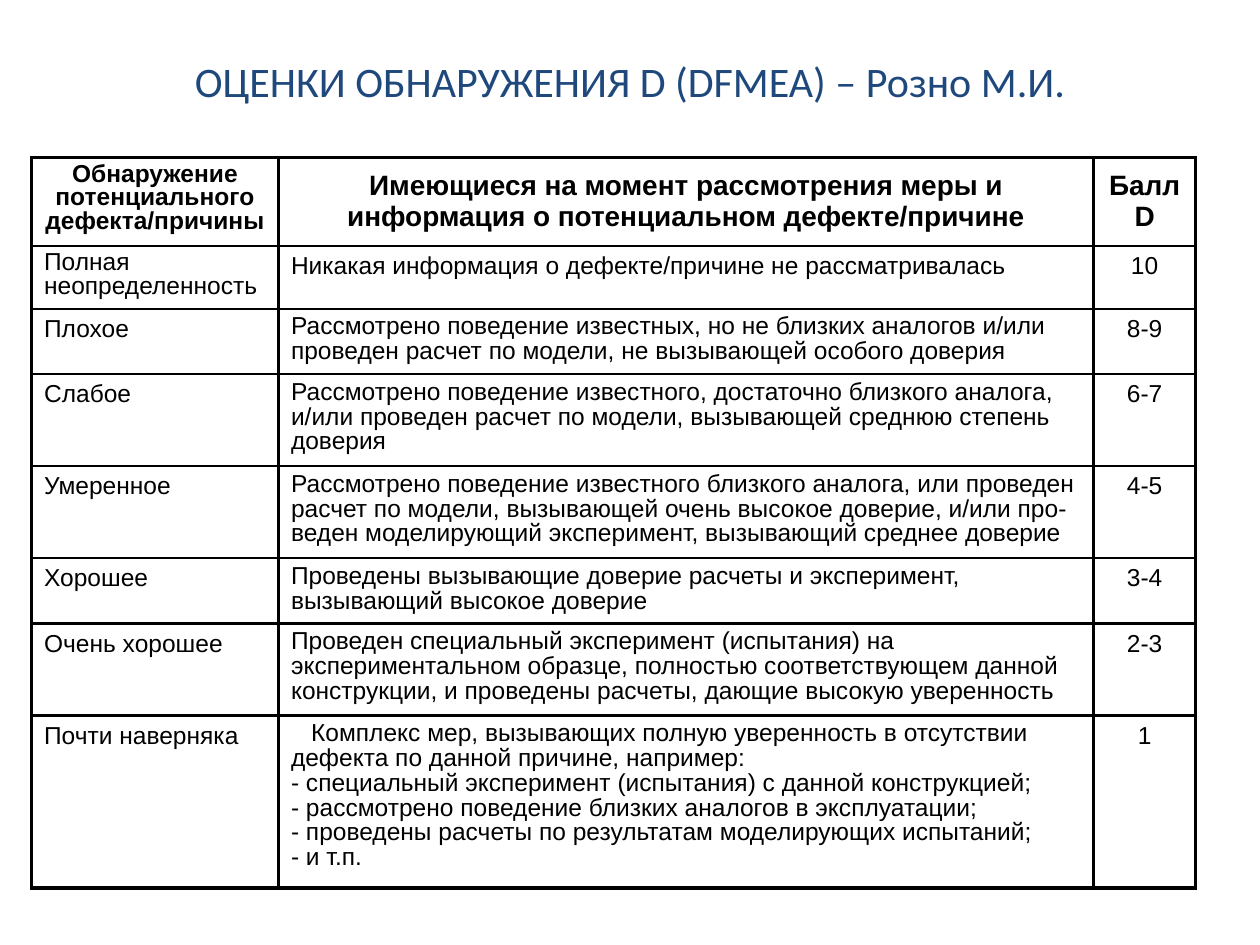
import pptx
import pptx.util
import pptx.dml.color
import pptx.enum.text
import pptx.oxml
import pptx.oxml.ns

Pt = pptx.util.Pt
Inch = pptx.util.Inches
Align = pptx.enum.text.PP_ALIGN
Anchor = pptx.enum.text.MSO_ANCHOR
WIDE, HIGH = 10, 7.5
INK, BLUE = "000000", "1F497D"
COLS = [1.96, 6.47, 0.81]
ROWS = [0.7, 0.5, 0.52, 0.73, 0.73, 0.52, 0.73, 1.37]
HEAD = [
    ("Обнаружение потенциального\nдефекта/причины", 14, 0.85, Anchor.TOP),
    ("Имеющиеся на момент рассмотрения меры и информация о потенциальном дефекте/причине", 16, None, Anchor.MIDDLE),
    ("Балл D", 16, None, Anchor.MIDDLE),
]
BODY = [
    ("Полная неопределенность", ["Никакая информация о дефекте/причине не рассматривалась"], "10"),
    ("Плохое", ["Рассмотрено поведение известных, но не близких аналогов и/или проведен расчет по модели, не вызывающей особого доверия"], "8-9"),
    ("Слабое", ["Рассмотрено поведение известного, достаточно близкого аналога, и/или проведен расчет по модели, вызывающей среднюю степень доверия"], "6-7"),
    ("Умеренное", ["Рассмотрено поведение известного близкого аналога, или проведен расчет по модели, вызывающей очень высокое доверие, и/или про-веден моделирующий эксперимент, вызывающий среднее доверие"], "4-5"),
    ("Хорошее", ["Проведены вызывающие доверие расчеты и эксперимент, вызывающий высокое доверие"], "3-4"),
    ("Очень хорошее", ["Проведен специальный эксперимент (испытания) на экспериментальном образце, полностью соответствующем данной конструкции, и проведены расчеты, дающие высокую уверенность"], "2-3"),
    ("Почти наверняка", [
        "Комплекс мер, вызывающих полную уверенность в отсутствии дефекта по данной причине, например:\n- специальный эксперимент (испытания) с данной конструкцией;",
        "- рассмотрено поведение близких аналогов в эксплуатации;\n- проведены расчеты по результатам моделирующих испытаний;\n- и т.п.",
    ], "1"),
]


def tint(code):
    return pptx.dml.color.RGBColor.from_string(code)


def write(para, text, size=14, font="Arial", color=INK, bold=False,
          align=Align.LEFT, space=None, indent=0):
    para.text = text
    para.alignment = align
    para.line_spacing = space
    if indent:
        para._p.get_or_add_pPr().set("indent", str(Inch(indent)))
    for run in para.runs:
        run.font.size = Pt(size)
        run.font.name = font
        run.font.bold = bold
        run.font.color.rgb = tint(color)


def edge(cell, sides):
    props = cell._tc.get_or_add_tcPr()
    for spot, (side, thick) in enumerate(sides.items()):
        line = pptx.oxml.parse_xml(
            f'<a:ln{side} {pptx.oxml.ns.nsdecls("a")} w="{Pt(thick)}">'
            f'<a:solidFill><a:srgbClr val="{INK}"/></a:solidFill></a:ln{side}>')
        props.insert(spot, line)


def title(slide, box):
    head = slide.shapes.title
    head.left, head.top, head.width, head.height = map(Inch, box)
    frame = head.text_frame
    frame.word_wrap = True
    frame.vertical_anchor = Anchor.MIDDLE
    write(frame.paragraphs[0], "ОЦЕНКИ ОБНАРУЖЕНИЯ D (DFMEA) – Розно М.И.",
          size=24, font="Calibri", color=BLUE, align=Align.CENTER)


def fill(table):
    for col, (text, size, space, anchor) in enumerate(HEAD):
        cell = table.cell(0, col)
        cell.vertical_anchor = anchor
        write(cell.text_frame.paragraphs[0], text, size=size, bold=True,
              align=Align.CENTER, space=space)
    for row, (name, parts, score) in enumerate(BODY, 1):
        first, mid, last = table.rows[row].cells
        tight = 0.85 if row == 1 else None
        write(first.text_frame.paragraphs[0], name, space=tight)
        frame = mid.text_frame
        for spot, text in enumerate(parts):
            para = frame.add_paragraph() if spot else frame.paragraphs[0]
            inset = 0.16 if len(parts) > 1 and spot == 0 else 0
            write(para, text, space=0.9 if row > 1 else None, indent=inset)
        write(last.text_frame.paragraphs[0], score, align=Align.CENTER)


def grid(slide, box):
    left, top, width, height = box
    table = slide.shapes.add_table(len(ROWS), len(COLS), *map(Inch, box)).table
    table.first_row = table.horz_banding = False
    for col, part in zip(table.columns, COLS):
        col.width = Inch(width * part / sum(COLS))
    for row, part in zip(table.rows, ROWS):
        row.height = Inch(height * part / sum(ROWS))
    fill(table)
    for y, row in enumerate(table.rows):
        for x, cell in enumerate(row.cells):
            cell.fill.background()
            outer = {"L": x == 0, "R": x == len(COLS) - 1,
                     "T": y == 0, "B": y == len(ROWS) - 1}
            edge(cell, {side: 2.25 if rim else 1.5 for side, rim in outer.items()})


def main():
    deck = pptx.Presentation()
    deck.slide_width, deck.slide_height = Inch(WIDE), Inch(HIGH)
    slide = deck.slides.add_slide(deck.slide_layouts[5])
    title(slide, (WIDE * 0.05, HIGH * 0.05, WIDE * 0.9, HIGH * 0.07))
    grid(slide, (WIDE * 0.025, HIGH / 6, sum(COLS), sum(ROWS)))
    deck.save("out.pptx")


if __name__ == "__main__":
    main()
